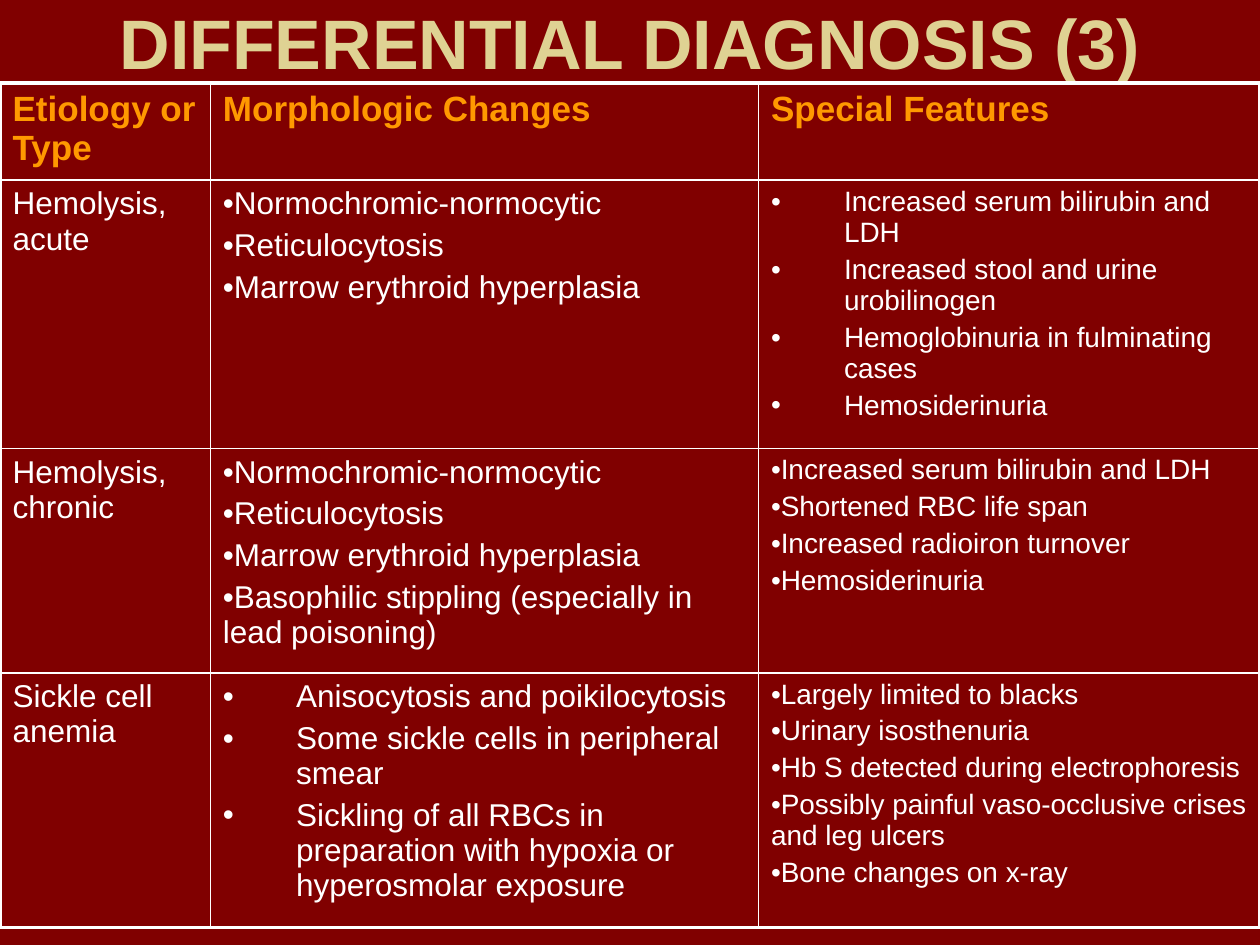
from lxml import etree
from pptx import Presentation
from pptx.dml.color import RGBColor
from pptx.enum.text import MSO_ANCHOR, PP_ALIGN
from pptx.oxml.ns import qn
from pptx.util import Inches, Pt

MAROON = RGBColor(0x80, 0x00, 0x00)
SAND = RGBColor(0xDF, 0xD2, 0x93)
ORANGE = RGBColor(0xFF, 0x99, 0x00)
WHITE = RGBColor(0xFF, 0xFF, 0xFF)
CENTER = PP_ALIGN.CENTER
MIDDLE = MSO_ANCHOR.MIDDLE
FONT = "Arial"
THIN, THICK = 1, 2.25
HANG = 0.58

COLS = [1.67, 4.35, 3.98]
ROWS = [0.77, 2.13, 1.78, 2.02]
SIZES = [18, 18, 16]
HEADS = ["Etiology or Type", "Morphologic Changes", "Special Features"]
BODY = [
    ["Hemolysis, acute",
     ["Normochromic-normocytic", "Reticulocytosis",
      "Marrow erythroid hyperplasia"],
     ["Increased serum bilirubin and LDH",
      "Increased stool and urine urobilinogen",
      "Hemoglobinuria in fulminating cases", "Hemosiderinuria"]],
    ["Hemolysis, chronic",
     ["Normochromic-normocytic", "Reticulocytosis",
      "Marrow erythroid hyperplasia",
      "Basophilic stippling (especially in lead poisoning)"],
     ["Increased serum bilirubin and LDH", "Shortened RBC life span",
      "Increased radioiron turnover", "Hemosiderinuria"]],
    ["Sickle cell anemia",
     ["Anisocytosis and poikilocytosis",
      "Some sickle cells in peripheral smear",
      "Sickling of all RBCs in preparation with hypoxia or "
      "hyperosmolar exposure"],
     ["Largely limited to blacks", "Urinary isosthenuria",
      "Hb S detected during electrophoresis",
      "Possibly painful vaso-occlusive crises and leg ulcers",
      "Bone changes on x-ray"]],
]
HUNG = {(1, 2), (3, 1)}  # cells whose bullets hang


def style(para, size, color, bold=False):
    for run in para.runs:
        font = run.font
        font.name, font.size, font.bold = FONT, Pt(size), bold
        font.color.rgb = color


def add_bullet(para, indent):
    props = para._p.get_or_add_pPr()
    props.set("marL", str(Inches(indent)))
    props.set("indent", str(-Inches(indent)))
    etree.SubElement(props, qn("a:buFont")).set("typeface", FONT)
    etree.SubElement(props, qn("a:buChar")).set("char", "•")


def set_edges(cell, widths):
    props = cell._tc.get_or_add_tcPr()
    for spot, (side, width) in enumerate(widths.items()):
        line = etree.Element(qn(f"a:ln{side}"), w=str(Pt(width)))
        fill = etree.SubElement(line, qn("a:solidFill"))
        etree.SubElement(fill, qn("a:srgbClr")).set("val", str(WHITE))
        props.insert(spot, line)


def fill_cell(cell, text, size, color, bold, indent):
    listed = isinstance(text, list)
    cell.text_frame.text = "\n".join(text) if listed else text
    for para in cell.text_frame.paragraphs:
        para.space_before = Pt(size * 0.2)
        style(para, size, color, bold)
        if listed:
            add_bullet(para, indent)


def add_title(slide, left, top, width, height):
    box = slide.shapes.add_textbox(Inches(left), Inches(top),
                                   Inches(width), Inches(height))
    frame = box.text_frame
    frame.word_wrap = True
    frame.vertical_anchor = MIDDLE
    frame.text = "DIFFERENTIAL DIAGNOSIS (3)"
    para = frame.paragraphs[0]
    para.alignment = CENTER
    style(para, 40, SAND, True)


def add_grid(slide, left, top):
    table = slide.shapes.add_table(
        len(ROWS), len(COLS), Inches(left), Inches(top),
        Inches(sum(COLS)), Inches(sum(ROWS))).table
    table.first_row = table.horz_banding = False
    for col, width in zip(table.columns, COLS):
        col.width = Inches(width)
    for row, height in zip(table.rows, ROWS):
        row.height = Inches(height)

    last_row, last_col = len(ROWS) - 1, len(COLS) - 1
    for r, texts in enumerate([HEADS] + BODY):
        head = r == 0
        for c, text in enumerate(texts):
            cell = table.cell(r, c)
            fill_cell(cell, text, 20 if head else SIZES[c],
                      ORANGE if head else WHITE, head,
                      HANG if (r, c) in HUNG else 0)
            cell.fill.background()
            # Thick outer frame, thin inner rules
            outer = {"L": c == 0, "R": c == last_col,
                     "T": head, "B": r == last_row}
            set_edges(cell, {side: THICK if edge else THIN
                             for side, edge in outer.items()})


def main():
    deck = Presentation()
    deck.slide_width, deck.slide_height = Inches(10), Inches(7.5)
    slide = deck.slides.add_slide(deck.slide_layouts[6])
    back = slide.background.fill
    back.solid()
    back.fore_color.rgb = MAROON
    add_title(slide, 0.5, 0, 9, 0.66)
    add_grid(slide, 0, 0.66)
    deck.save("out.pptx")


if __name__ == "__main__":
    main()
